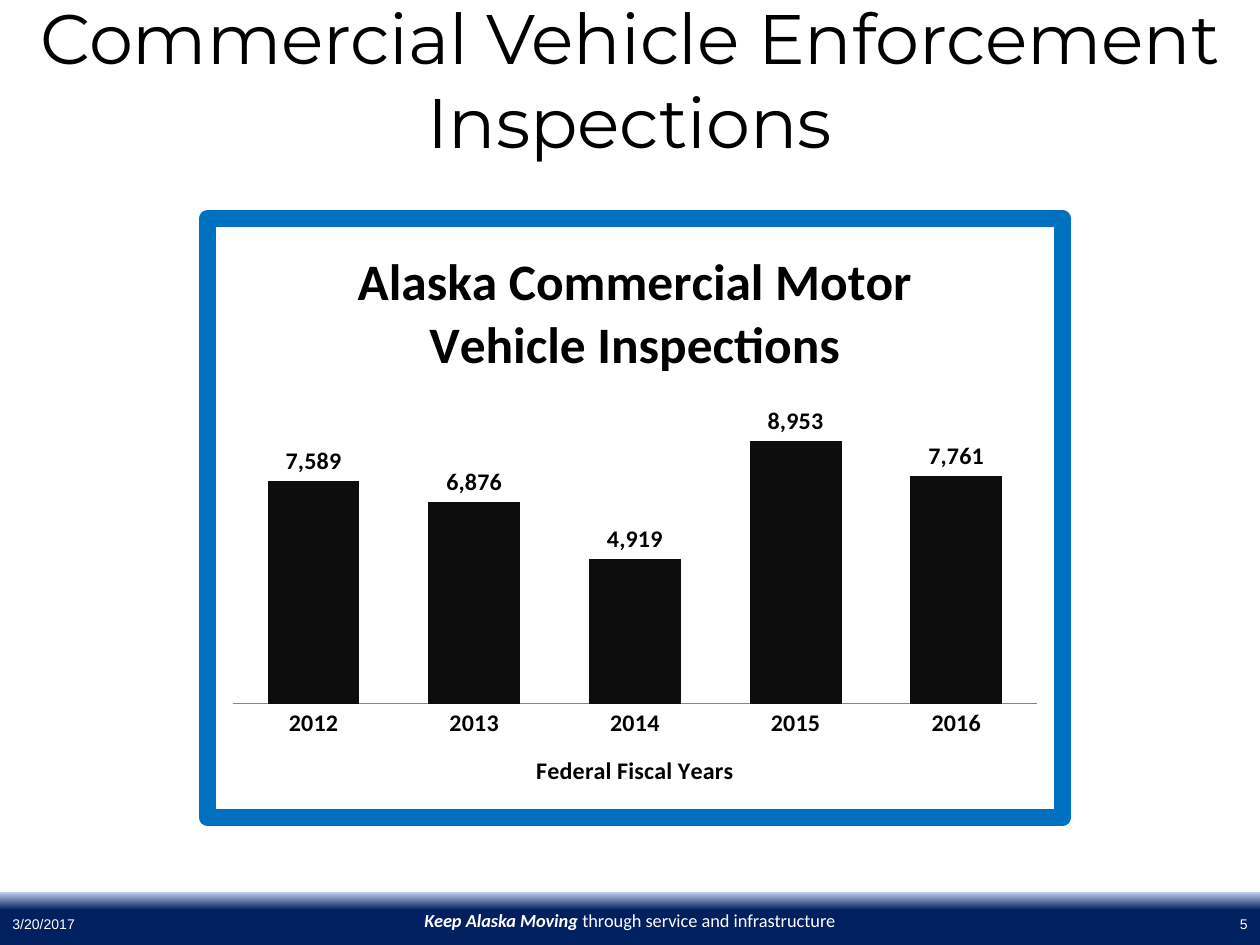
from lxml import etree
from pptx import Presentation, util as u
from pptx.chart.data import CategoryChartData
from pptx.dml.color import RGBColor
from pptx.enum import chart as ch, shapes, text
from pptx.oxml import parse_xml
from pptx.oxml.ns import nsdecls, qn

PX = 914400 / 126  # EMU in one px

THEME = {
    "black": "000000", "white": "FFFFFF", "navy": "002060", "pale": "C2D1ED",
    "bar": "0D0D0D", "axis": "868686", "frame": "0070C0", "frame_pt": 10,
    "head": "Montserrat", "body": "Calibri", "small": "Arial",
    "title_pt": 40, "chart_title_pt": 30, "chart_pt": 14,
    "tagline_pt": 10.5, "footer_pt": 8,
}


def box(*lengths):
    return [u.Emu(round(n * PX)) for n in lengths]


def style(font, color, **values):
    for name, value in values.items():
        setattr(font, name, value)
    font.color.rgb = RGBColor.from_string(THEME[color])


prs = Presentation()
prs.slide_width, prs.slide_height = box(1260, 945)
s = prs.slides.add_slide(prs.slide_layouts[5])

# Footer band
sp = s.shapes.add_shape(shapes.MSO_SHAPE.RECTANGLE, *box(0, 892, 1260, 53))
sp.shadow.inherit = False
sp.line.fill.background()
sp.fill.gradient()
sp.fill.gradient_angle = 270
for stop, (position, color) in zip(sp.fill.gradient_stops, [(0, "pale"), (0.34, "navy")]):
    stop.position = position
    stop.color.rgb = RGBColor.from_string(THEME[color])

# Footer texts: left, width, alignment, anchor, font, size, runs (text, emphasis)
ALIGN, ANCHOR = text.PP_ALIGN, text.MSO_ANCHOR
footers = [
    (294, 672, ALIGN.CENTER, ANCHOR.TOP, "body", "tagline_pt",
     [("Keep Alaska Moving ", True), ("through service and infrastructure", False)]),
    (0, 294, ALIGN.LEFT, ANCHOR.MIDDLE, "small", "footer_pt", [("3/20/2017", False)]),
    (966, 294, ALIGN.RIGHT, ANCHOR.MIDDLE, "small", "footer_pt", [("5", False)]),
]
for left, width, align, anchor, face, size, runs in footers:
    tf = s.shapes.add_textbox(*box(left, 903, width, 42)).text_frame
    tf.word_wrap = True
    tf.vertical_anchor = anchor
    p = tf.paragraphs[0]
    p.alignment = align
    for words, strong in runs:
        r = p.add_run()
        r.text = words
        style(r.font, "white", name=THEME[face], size=u.Pt(THEME[size]),
              bold=strong, italic=strong)

# Title
title = s.shapes.title
title.left, title.top, title.width, title.height = box(0, 0, 1260, 158)
tf = title.text_frame
tf.text = "Commercial Vehicle Enforcement Inspections"
tf.auto_size = text.MSO_AUTO_SIZE.NONE
tf.word_wrap = True
tf.vertical_anchor = ANCHOR.MIDDLE
p = tf.paragraphs[0]
p.alignment = ALIGN.CENTER
style(p.runs[0].font, "black", name=THEME["head"], size=u.Pt(THEME["title_pt"]))

# Inspections chart
data = CategoryChartData(number_format="#,##0")
data.categories = ["2012", "2013", "2014", "2015", "2016"]
data.add_series("Series 1", [7589, 6876, 4919, 8953, 7761])
chart = s.shapes.add_chart(ch.XL_CHART_TYPE.COLUMN_CLUSTERED,
                           *box(199, 210, 872, 616), data).chart
chart.has_legend = False
chart_font = {"name": THEME["body"], "size": u.Pt(THEME["chart_pt"]), "bold": True}
style(chart.font, "black", **chart_font)

chart.has_title = True
cat, val = chart.category_axis, chart.value_axis
cat.has_title = True
for holder, words, size in [
    (chart.chart_title, "Alaska Commercial Motor Vehicle Inspections", "chart_title_pt"),
    (cat.axis_title, "Federal Fiscal Years", "chart_pt"),
]:
    holder.text_frame.text = words
    style(holder.text_frame.paragraphs[0].runs[0].font, "black",
          **{**chart_font, "size": u.Pt(THEME[size])})
chart.chart_title.include_in_layout = False

# Axes
cat.major_tick_mark = ch.XL_TICK_MARK.NONE
cat.format.line.color.rgb = RGBColor.from_string(THEME["axis"])
val.visible = False
val.has_major_gridlines = False
val.minimum_scale, val.maximum_scale = 0, 10000

# Columns and their labels
plot = chart.plots[0]
plot.gap_width = 75
plot.vary_by_categories = False
fill = plot.series[0].format.fill
fill.solid()
fill.fore_color.rgb = RGBColor.from_string(THEME["bar"])
plot.has_data_labels = True
labels = plot.data_labels
for name, value in {"show_value": True, "number_format": "#,##0",
                    "number_format_is_linked": False,
                    "position": ch.XL_LABEL_POSITION.OUTSIDE_END}.items():
    setattr(labels, name, value)
style(labels.font, "black", **chart_font)

# Plot area position, as fractions of the chart
area = chart._chartSpace.find(".//" + qn("c:plotArea"))
layout = area.find(qn("c:layout"))
if layout is None:
    layout = parse_xml(f"<c:layout {nsdecls('c')}/>")
    area.insert(0, layout)
manual = etree.SubElement(layout, qn("c:manualLayout"))
for tag, value in [("layoutTarget", "inner"), ("xMode", "edge"), ("yMode", "edge"),
                   ("x", 0.03), ("y", 0.32), ("w", 0.94), ("h", 0.49)]:
    etree.SubElement(manual, qn("c:" + tag)).set("val", str(value))

# Chart background and thick frame
chart._chartSpace.find(qn("c:txPr")).addprevious(parse_xml(
    f"<c:spPr {nsdecls('c', 'a')}>"
    f"<a:solidFill><a:srgbClr val=\"{THEME['white']}\"/></a:solidFill>"
    f"<a:ln w=\"{u.Pt(THEME['frame_pt'])}\"><a:solidFill>"
    f"<a:srgbClr val=\"{THEME['frame']}\"/></a:solidFill><a:round/></a:ln></c:spPr>"))

prs.save("out.pptx")
